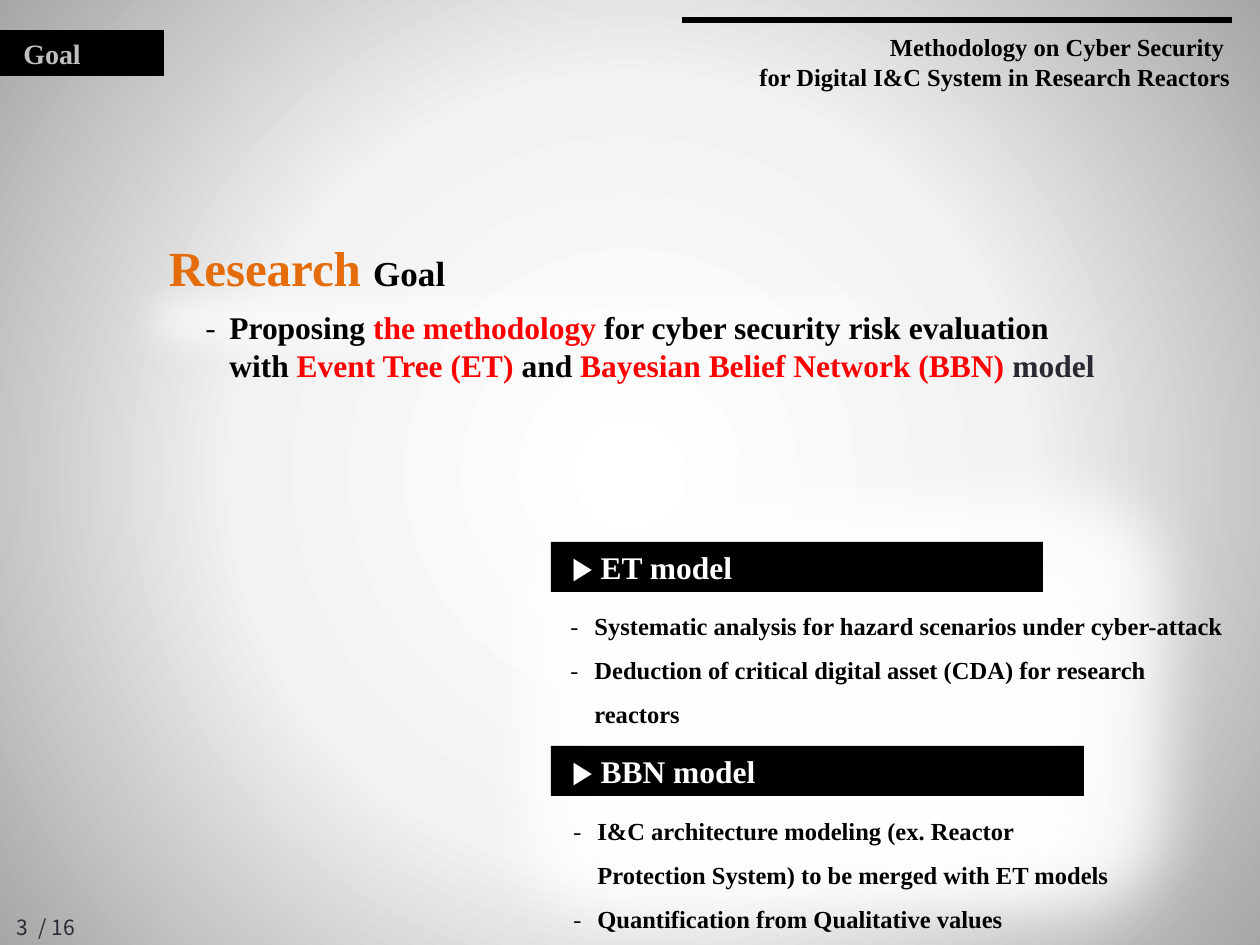
from pptx import Presentation
from pptx.dml.color import RGBColor
from pptx.enum.shapes import MSO_CONNECTOR, MSO_SHAPE
from pptx.enum.text import MSO_ANCHOR, PP_ALIGN
from pptx.oxml import parse_xml
from pptx.oxml.ns import nsdecls, qn
from pptx.oxml.xmlchemy import OxmlElement
from pptx.util import Pt

SCALE = 914400 / 126  # EMU per px
SERIF, SANS = "Times New Roman", "Noto Sans CJK KR"
BLACK = RGBColor(0x00, 0x00, 0x00)
WHITE = RGBColor(0xFF, 0xFF, 0xFF)
SILVER = RGBColor(0xBF, 0xBF, 0xBF)
INK = RGBColor(0x29, 0x29, 0x34)
RED = RGBColor(0xFF, 0x00, 0x00)
ORANGE = RGBColor(0xE4, 0x6C, 0x0A)

presentation = Presentation()
presentation.slide_width = round(1260 * SCALE)
presentation.slide_height = round(945 * SCALE)
slide = presentation.slides.add_slide(presentation.slide_layouts[6])


def add_box(box, fill=None, kind=MSO_SHAPE.RECTANGLE):
    """Add a filled, borderless shape, or a text box when there is no fill."""
    place = [round(value * SCALE) for value in box]
    if fill is None:
        shape = slide.shapes.add_textbox(*place)
    else:
        shape = slide.shapes.add_shape(kind, *place)
        shape.fill.solid()
        shape.fill.fore_color.rgb = fill
        shape.line.fill.background()
        shape.shadow.inherit = False
    shape.text_frame.word_wrap = True
    return shape


def write(shape, paragraphs, align=PP_ALIGN.LEFT, spacing=None, left=0,
          bullets=0, font=SERIF, bold=True, **frame_format):
    """Fill a shape with paragraphs made of (text, size, colour) runs."""
    frame = shape.text_frame
    for name, value in frame_format.items():
        setattr(frame, name, value)
    for index, runs in enumerate(paragraphs):
        paragraph = frame.paragraphs[0] if index == 0 else frame.add_paragraph()
        paragraph.alignment = align
        if spacing:
            paragraph.line_spacing = spacing
        properties = paragraph._p.get_or_add_pPr()
        properties.set("marL", str(round(left * SCALE)))
        if index < bullets:
            properties.set("indent", str(round(-left * SCALE)))
            for tag, key, value in (("a:buFont", "typeface", SANS), ("a:buChar", "char", "-")):
                element = OxmlElement(tag)
                element.set(key, value)
                properties.append(element)
        for text, size, color in runs:
            run = paragraph.add_run()
            run.text = text
            for name, value in {"name": font, "size": Pt(size), "bold": bold}.items():
                setattr(run.font, name, value)
            run.font.color.rgb = color


# Radial grey backdrop
backdrop = add_box((0, -1, 1260, 950), WHITE)
solid = backdrop._element.spPr.find(qn("a:solidFill"))
stops = "".join(
    f'<a:gs pos="{position}000"><a:srgbClr val="{color}"/></a:gs>'
    for position, color in ((0, "FFFFFF"), (50, "F2F2F2"), (100, "A6A6A6")))
solid.getparent().replace(solid, parse_xml(
    f'<a:gradFill {nsdecls("a")} rotWithShape="1"><a:gsLst>{stops}</a:gsLst><a:path path="circle">'
    '<a:fillToRect l="50000" t="50000" r="50000" b="50000"/></a:path></a:gradFill>'))

# Soft white glows behind the text
for box, radius in (((461, 435, 764, 539), 63),
                    ((115, 265, 801, 111), 40),
                    ((520, 508, 625, 432), 63)):
    properties = add_box(box, WHITE, MSO_SHAPE.ROUNDED_RECTANGLE)._element.spPr
    alpha = OxmlElement("a:alpha")
    alpha.set("val", "89000")
    properties.find(qn("a:solidFill"))[0].append(alpha)
    soft_edge = OxmlElement("a:softEdge")
    soft_edge.set("rad", str(round(radius * SCALE)))
    properties.find(qn("a:effectLst")).append(soft_edge)

# Header: rule, talk title and section tag
rule = slide.shapes.add_connector(
    MSO_CONNECTOR.STRAIGHT, *[round(value * SCALE) for value in (682, 20, 1232, 20)])
rule.line.color.rgb = BLACK
rule.line.width = Pt(3)
rule._element.spPr.append(OxmlElement("a:effectLst"))
write(add_box((660, 26, 583, 72)),
      [[("Methodology on Cyber Security ", 14, BLACK)],
       [("for Digital I&C System in Research Reactors", 14, BLACK)]],
      align=PP_ALIGN.RIGHT)
write(add_box((-25, 30, 189, 46), BLACK), [[("Goal", 16, SILVER)]],
      left=36, vertical_anchor=MSO_ANCHOR.MIDDLE)

# Research goal
write(add_box((144, 231, 1020, 72)),
      [[("Research ", 28, ORANGE), ("Goal", 20, BLACK)]],
      margin_left=round(25 * SCALE))
write(add_box((193, 302, 1034, 90)),
      [[("Proposing ", 18, BLACK), ("the methodology", 18, RED),
        (" for cyber security risk evaluation", 18, BLACK)],
       [("with ", 18, BLACK), ("Event Tree (ET)", 18, RED), (" and ", 18, BLACK),
        ("Bayesian Belief Network (BBN) ", 18, RED), ("model", 18, INK)]],
      left=24, bullets=1)

# Models: black heading bar with its points below
models = (
    ("ET model", (551, 542, 492, 50), (558, 590, 684, 146),
     ("Systematic analysis for hazard scenarios under cyber-attack",
      "Deduction of critical digital asset (CDA) for research reactors")),
    ("BBN model", (551, 746, 533, 50), (561, 795, 580, 146),
     ("I&C architecture modeling (ex. Reactor Protection System) to be merged with ET models",
      "Quantification from Qualitative values")),
)
for heading, bar, body, points in models:
    write(add_box(bar, BLACK), [[(f"▶ {heading}", 18, WHITE)]],
          margin_left=round(21 * SCALE), vertical_anchor=MSO_ANCHOR.MIDDLE)
    write(add_box(body), [[(point, 14, BLACK)] for point in points],
          spacing=1.5, left=24, bullets=len(points))

# Page number and total
for text, box, inset in (("3", (0, 908, 45, 37), 16), ("/ 16", (0, 908, 94, 37), 39)):
    write(add_box(box), [[(text, 12, INK)]], font=SANS, bold=False,
          margin_left=round(inset * SCALE), margin_right=0)

presentation.save("out.pptx")
